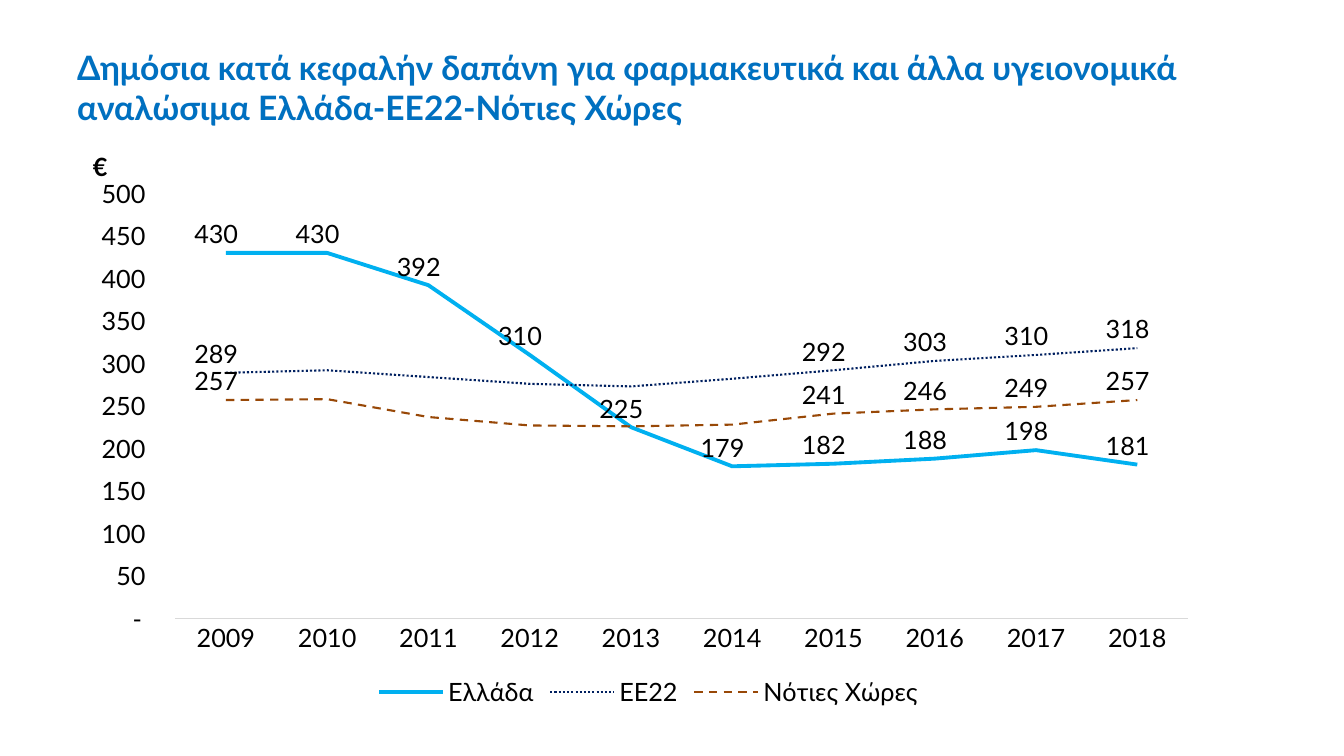
from dataclasses import dataclass

import pptx
import pptx.chart.data
import pptx.dml.color
import pptx.enum.chart
import pptx.enum.dml
import pptx.enum.text
import pptx.oxml
import pptx.oxml.ns
import pptx.util

EMU_PER_PX = 914400 / 100.8


@dataclass(frozen=True)
class Theme:
    font: str = "Lato"
    title_size: int = 24
    chart_size: int = 18
    title: str = "0070C0"
    text: str = "000000"
    axis: str = "D9D9D9"
    greece: str = "00B0F0"
    europe: str = "002060"
    south: str = "984807"


@dataclass(frozen=True)
class Frame:
    left: int
    top: int
    width: int
    height: int

    def emu(self) -> list:
        return [px(n) for n in (self.left, self.top, self.width, self.height)]


@dataclass(frozen=True)
class SpendingLine:
    name: str
    values: tuple
    color: str
    width: float
    dash: object
    labelled: tuple


THEME = Theme()
DASHES = pptx.enum.dml.MSO_LINE
TITLE = ("Δημόσια κατά κεφαλήν δαπάνη για φαρμακευτικά και άλλα υγειονομικά "
         "αναλώσιμα Ελλάδα-ΕΕ22-Νότιες Χώρες")
TITLE_FRAME = Frame(67, 24, 1123, 126)
CHART_FRAME = Frame(77, 132, 1143, 580)
YEARS = tuple(range(2009, 2019))
NUMBER_FORMAT = r"_-* #,##0\ _€_-;\-* #,##0\ _€_-;_-* \-??"
ALL_POINTS = tuple(range(len(YEARS)))
ENDS = (0, 6, 7, 8, 9)
LINES = (
    SpendingLine("Ελλάδα", (430, 430, 392, 310, 225, 179, 182, 188, 198, 181),
                 THEME.greece, 2.75, DASHES.SOLID, ALL_POINTS),
    SpendingLine("ΕΕ22", (289, 292, 284, 276, 273, 282, 292, 303, 310, 318),
                 THEME.europe, 1.5, DASHES.ROUND_DOT, ENDS),
    SpendingLine("Νότιες Χώρες", (257, 258, 237, 227, 226, 228, 241, 246, 249, 257),
                 THEME.south, 1.5, DASHES.DASH, ENDS),
)


def px(count: int) -> pptx.util.Emu:
    return pptx.util.Emu(round(count * EMU_PER_PX))


def rgb(color: str) -> pptx.dml.color.RGBColor:
    return pptx.dml.color.RGBColor.from_string(color)


def style_font(font, size: int, color: str, bold: bool = False) -> None:
    font.name = THEME.font
    font.size = pptx.util.Pt(size)
    font.bold = bold
    font.color.rgb = rgb(color)


def chart_xml(content: str):
    """Parse a chart element, declaring its namespace on the outer tag."""
    tag, rest = content.split(">", 1)
    closing = "/" if tag.endswith("/") else ""
    namespace = pptx.oxml.ns.nsdecls("c")
    return pptx.oxml.parse_xml(f"<{tag.strip('</')} {namespace}{closing}>{rest}")


def set_layout(parent, index: int, settings: dict) -> None:
    """Place a chart part by fractions of the chart area."""
    for old in parent.findall(pptx.oxml.ns.qn("c:layout")):
        parent.remove(old)
    items = "".join(f'<c:{key} val="{value}"/>' for key, value in settings.items())
    parent.insert(index, chart_xml(
        f"<c:layout><c:manualLayout>{items}</c:manualLayout></c:layout>"))


def add_title(page) -> None:
    box = page.shapes.title
    box.left, box.top, box.width, box.height = TITLE_FRAME.emu()
    frame = box.text_frame
    frame.word_wrap = True
    frame.auto_size = pptx.enum.text.MSO_AUTO_SIZE.NONE
    frame.vertical_anchor = pptx.enum.text.MSO_ANCHOR.MIDDLE
    para = frame.paragraphs[0]
    para.alignment = pptx.enum.text.PP_ALIGN.LEFT
    span = para.add_run()
    span.text = TITLE
    style_font(span.font, THEME.title_size, THEME.title, bold=True)


def style_line(series, line: SpendingLine) -> None:
    series.smooth = False
    series.format.line.color.rgb = rgb(line.color)
    series.format.line.width = pptx.util.Pt(line.width)
    series.format.line.dash_style = line.dash
    labels = series.data_labels
    labels.show_value = True
    labels.number_format = NUMBER_FORMAT
    labels.number_format_is_linked = False
    labels.position = pptx.enum.chart.XL_LABEL_POSITION.ABOVE
    style_font(labels.font, THEME.chart_size, THEME.text)
    # Unlabelled years
    element = series._element.find(pptx.oxml.ns.qn("c:dLbls"))
    hidden = [point for point in ALL_POINTS if point not in line.labelled]
    for position, point in enumerate(hidden):
        element.insert(position, chart_xml(
            f'<c:dLbl><c:idx val="{point}"/><c:delete val="1"/></c:dLbl>'))


def style_axes(chart) -> None:
    for axis in (chart.category_axis, chart.value_axis):
        axis.has_major_gridlines = False
        axis.major_tick_mark = pptx.enum.chart.XL_TICK_MARK.NONE
        axis.minor_tick_mark = pptx.enum.chart.XL_TICK_MARK.NONE
        style_font(axis.tick_labels.font, THEME.chart_size, THEME.text)
    chart.category_axis.format.line.color.rgb = rgb(THEME.axis)
    chart.category_axis.format.line.width = pptx.util.Pt(1)

    amounts = chart.value_axis
    amounts.format.line.fill.background()
    amounts.minimum_scale, amounts.maximum_scale, amounts.major_unit = 0, 500, 50
    amounts.tick_labels.number_format = NUMBER_FORMAT
    amounts.tick_labels.number_format_is_linked = False

    # Upright currency sign above the scale
    currency = amounts.axis_title
    span = currency.text_frame.paragraphs[0].add_run()
    span.text = "€"
    style_font(span.font, THEME.chart_size, THEME.text, bold=True)
    body = next(currency._element.iter(pptx.oxml.ns.qn("a:bodyPr")))
    body.set("rot", "0")
    body.set("vert", "horz")
    set_layout(currency._element, 1,
               {"xMode": "edge", "yMode": "edge", "x": 0.01, "y": 0.02})


def add_spending_chart(page) -> None:
    data = pptx.chart.data.CategoryChartData()
    data.categories = [str(year) for year in YEARS]
    for line in LINES:
        data.add_series(line.name, line.values)
    chart = page.shapes.add_chart(
        pptx.enum.chart.XL_CHART_TYPE.LINE, *CHART_FRAME.emu(), data).chart
    chart.has_title = False
    style_font(chart.font, THEME.chart_size, THEME.text)
    plot = chart.plots[0]
    plot.vary_by_categories = False
    for series, line in zip(plot.series, LINES):
        style_line(series, line)
    style_axes(chart)
    plot_area = next(chart._chartSpace.iter(pptx.oxml.ns.qn("c:plotArea")))
    set_layout(plot_area, 0, {"layoutTarget": "inner", "xMode": "edge", "yMode": "edge",
                              "x": 0.086, "y": 0.106, "w": 0.886, "h": 0.733})
    # Legend
    chart.has_legend = True
    chart.legend.position = pptx.enum.chart.XL_LEGEND_POSITION.BOTTOM
    chart.legend.include_in_layout = False
    style_font(chart.legend.font, THEME.chart_size, THEME.text)


def main() -> None:
    deck = pptx.Presentation()
    deck.slide_width, deck.slide_height = px(1344), px(756)
    page = deck.slides.add_slide(deck.slide_layouts.get_by_name("Title Only"))
    add_title(page)
    add_spending_chart(page)
    deck.save("out.pptx")


if __name__ == "__main__":
    main()
